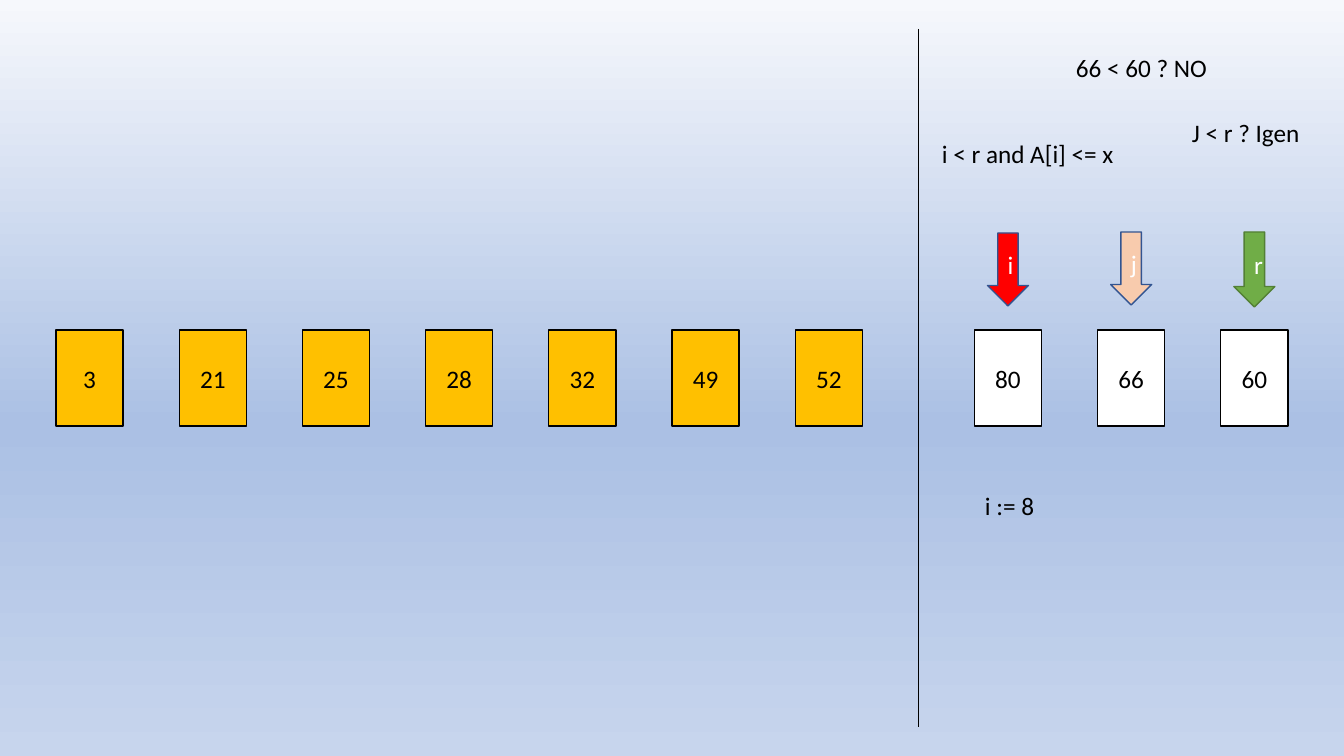
import copy

import pptx
import pptx.dml.color
import pptx.enum.shapes
import pptx.enum.text
import pptx.oxml.ns
import pptx.util

PX = 914400 / 100.8
SLIDE_WIDTH, SLIDE_HEIGHT = 1344, 756


def px(length):
    return pptx.util.Emu(round(length * PX))


def paint(color_format, color):
    color_format.rgb = pptx.dml.color.RGBColor.from_string(color)


deck = pptx.Presentation()
deck.slide_width, deck.slide_height = px(SLIDE_WIDTH), px(SLIDE_HEIGHT)
page = deck.slides.add_slide(deck.slide_layouts[6])

# Background gradient, top to bottom
background = page.background.fill
background.gradient()
background.gradient_angle = 270
stop_list = page.element.find(".//" + pptx.oxml.ns.qn("a:gsLst"))
stop_list.append(copy.deepcopy(stop_list[-1]))
gradient = [(0, "F6F8FC"), (0.56, "ABC0E4"), (1, "C7D5ED")]
for stop, (position, color) in zip(background.gradient_stops, gradient):
    stop.position = position
    paint(stop.color, color)

# Cells and the divider share one gap across the slide
GAP = 56
CELL_TOP, CELL_HEIGHT = 330, 96
sorted_values = [3, 21, 25, 28, 32, 49, 52]
open_values = [80, 66, 60]
cell_width = (SLIDE_WIDTH - 12 * GAP) / 10
divider_x = GAP + len(sorted_values) * (cell_width + GAP)

rectangle = pptx.enum.shapes.MSO_SHAPE.RECTANGLE
down_arrow = pptx.enum.shapes.MSO_SHAPE.DOWN_ARROW
shapes = []
for start, values, fill in [(GAP, sorted_values, "FFC000"),
                            (divider_x + GAP, open_values, "FFFFFF")]:
    for index, value in enumerate(values):
        left = start + index * (cell_width + GAP)
        shapes.append((rectangle, left, CELL_TOP, cell_width, CELL_HEIGHT,
                       str(value), fill, "000000", "000000"))

# Index arrows centred above the open cells
ARROW_WIDTH = 41
arrows = [("i", 233, 73, "FF0000", "325491"),
          ("j", 232, 73, "F8CBAD", "325491"),
          ("r", 232, 75, "70AD47", "538035")]
for index, (label, top, height, fill, outline) in enumerate(arrows):
    center = divider_x + GAP + index * (cell_width + GAP) + cell_width / 2
    shapes.append((down_arrow, center - ARROW_WIDTH / 2, top, ARROW_WIDTH, height,
                   label, fill, outline, "FFFFFF"))

texts = []
for kind, left, top, width, height, text, fill, outline, text_color in shapes:
    shape = page.shapes.add_shape(kind, px(left), px(top), px(width), px(height))
    shape.shadow.inherit = False
    shape.fill.solid()
    paint(shape.fill.fore_color, fill)
    paint(shape.line.color, outline)
    shape.line.width = pptx.util.Pt(1)
    shape.text_frame.text = text
    shape.text_frame.vertical_anchor = pptx.enum.text.MSO_ANCHOR.MIDDLE
    shape.text_frame.paragraphs[0].alignment = pptx.enum.text.PP_ALIGN.CENTER
    texts.append((shape.text_frame, text_color))

divider = page.shapes.add_connector(
    pptx.enum.shapes.MSO_CONNECTOR.STRAIGHT,
    px(divider_x), px(29), px(divider_x), px(727))
paint(divider.line.color, "000000")
divider.line.width = pptx.util.Pt(0.5)
divider.element.spPr.append(pptx.oxml.parse_xml(
    f'<a:effectLst {pptx.oxml.ns.nsdecls("a")}/>'))

notes = [("i := 8", 975, 485, 162),
         ("66 < 60 ? NO", 1066, 47, 228),
         ("J < r ? Igen", 1182, 112, 145),
         ("i < r and A[i] <= x", 932, 133, 219)]
for text, left, top, width in notes:
    box = page.shapes.add_textbox(px(left), px(top), px(width), px(40))
    box.text_frame.word_wrap = True
    box.text_frame.auto_size = pptx.enum.text.MSO_AUTO_SIZE.SHAPE_TO_FIT_TEXT
    box.text_frame.text = text
    texts.append((box.text_frame, "000000"))

for frame, color in texts:
    span = frame.paragraphs[0].runs[0]
    span.font.name = "Calibri"
    span.font.size = pptx.util.Pt(18)
    paint(span.font.color, color)

deck.save("out.pptx")
